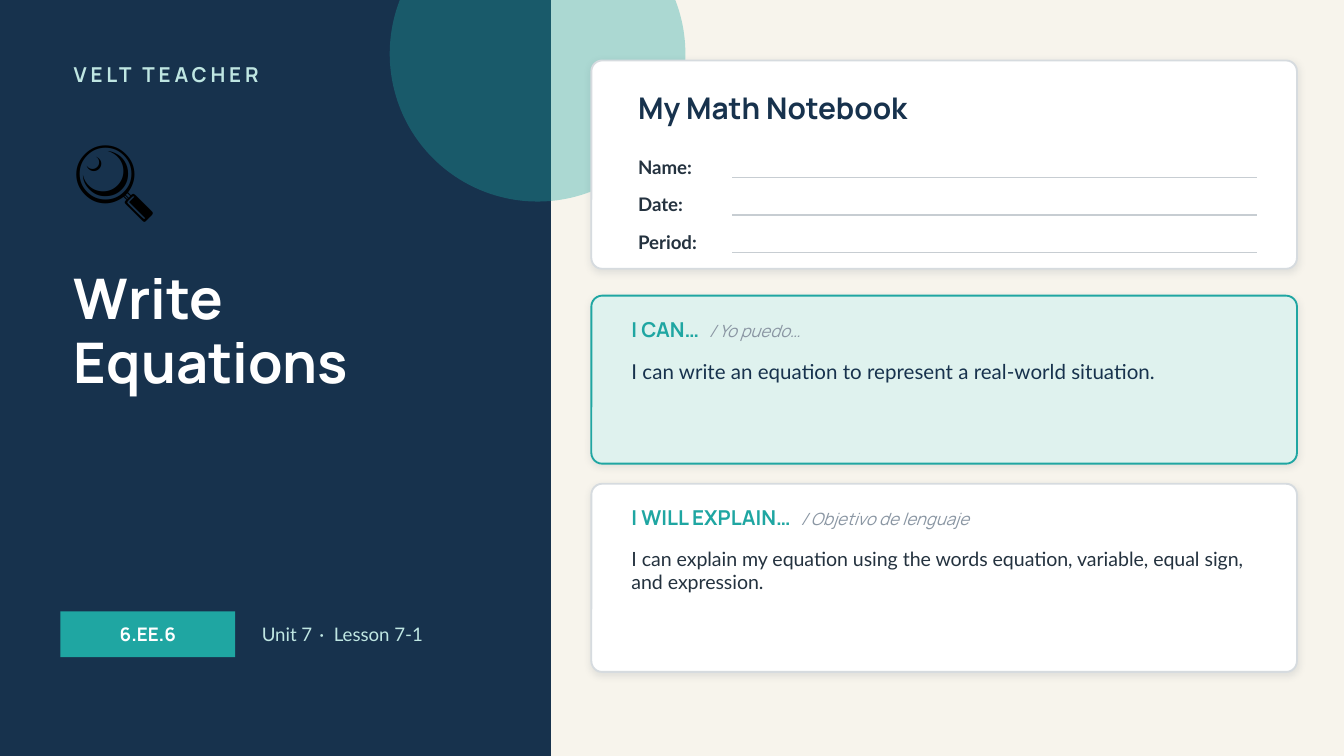
from lxml.etree import SubElement
from pptx import Presentation
from pptx.dml.color import RGBColor
from pptx.enum.shapes import MSO_CONNECTOR, MSO_SHAPE as SHAPE
from pptx.enum.text import MSO_ANCHOR as ANCHOR, MSO_AUTO_SIZE, PP_ALIGN as ALIGN
from pptx.oxml.ns import qn
from pptx.util import Pt

NAVY, TEAL, MINT, INK, WHITE = "17324D", "1FA6A2", "BFE6E2", "24323F", "FFFFFF"
CARD_LEFT, CARD_WIDTH = 316.8, 378
CARD_TEXT_LEFT, CARD_TEXT_WIDTH = 331.2, 349.2
FIELD_LEFT, FIELD_STEP = 334.8, 20.16


def rgb(color):
    return RGBColor.from_string(color)


def add_run(p, text, size, color, font="Lato", bold=False, italic=False, spacing=0):
    r = p.add_run()
    r.text = text
    r.font.size, r.font.name = Pt(size), font
    r.font.bold, r.font.italic = bold, italic
    r.font.color.rgb = rgb(color)
    if spacing:
        r.font._element.set("spc", str(int(spacing * 100)))


def add_text(s, left, top, width, height, anchor=ANCHOR.MIDDLE):
    """Add an empty wrapping text box and return its first paragraph."""
    tf = s.shapes.add_textbox(Pt(left), Pt(top), Pt(width), Pt(height)).text_frame
    tf.word_wrap, tf.vertical_anchor = True, anchor
    return tf.paragraphs[0]


def add_shape(s, kind, left, top, width, height, fill, line=None):
    sp = s.shapes.add_shape(kind, Pt(left), Pt(top), Pt(width), Pt(height))
    sp.shadow.inherit = False
    sp.fill.solid()
    sp.fill.fore_color.rgb = rgb(fill)
    if line:
        sp.line.color.rgb, sp.line.width = rgb(line), Pt(1)
    else:
        sp.line.fill.background()
    return sp


def set_alpha(color_element, percent):
    SubElement(color_element, qn("a:alpha"), val=str(percent * 1000))


def add_card(s, top, height, fill=WHITE, line="D6DBDF"):
    sp = add_shape(s, SHAPE.ROUNDED_RECTANGLE, CARD_LEFT, top, CARD_WIDTH, height, fill, line)
    sp.adjustments[0] = 5.8 / height
    effects = sp.element.spPr.find(qn("a:effectLst"))
    shadow = SubElement(effects, qn("a:outerShdw"), blurRad=str(Pt(4)), dist=str(Pt(1)),
                        dir="5400000", algn="bl", rotWithShape="0")
    set_alpha(SubElement(shadow, qn("a:srgbClr"), val="1C2E42"), 10)


def add_field(s, label, top):
    """Add a bold label with a writing line to its right."""
    add_run(add_text(s, FIELD_LEFT, top, 57.6, 17.28), label, 10, INK, bold=True)
    y = Pt(top + 14.4)
    line = s.shapes.add_connector(MSO_CONNECTOR.STRAIGHT, Pt(392.4), y, Pt(673.2), y)
    line.line.color.rgb, line.line.width = rgb("C7CDD2"), Pt(0.75)
    SubElement(line._element.spPr, qn("a:effectLst"))


def add_goal(s, top, height, heading, translation, text, size, color, **card_colors):
    add_card(s, top, height, **card_colors)
    p = add_text(s, CARD_TEXT_LEFT, top + 7.2, CARD_TEXT_WIDTH, 21.6)
    add_run(p, heading, 11, TEAL, "Manrope", bold=True)
    add_run(p, " ", 11, TEAL, "Manrope", bold=True, spacing=3)
    add_run(p, translation, 9, "8A96A3", "Manrope", italic=True)
    p = add_text(s, CARD_TEXT_LEFT, top + 30.24, CARD_TEXT_WIDTH, height - 34, ANCHOR.TOP)
    add_run(p, text, size, color)


def set_title(s, text):
    sp = s.shapes.title
    sp.left, sp.top, sp.width, sp.height = Pt(32.4), Pt(140.4), Pt(237.6), Pt(122.4)
    sp.element.getparent().append(sp.element)  # bring in front of the panel
    tf = sp.text_frame
    tf.word_wrap, tf.auto_size = True, MSO_AUTO_SIZE.NONE
    tf.vertical_anchor = ANCHOR.TOP
    p = tf.paragraphs[0]
    p.alignment, p.line_spacing = ALIGN.LEFT, 0.95
    add_run(p, text, 30, WHITE, "Manrope", bold=True)


def add_cover_panel(s):
    add_shape(s, SHAPE.RECTANGLE, 0, 0, 295.2, 405, NAVY)
    circle = add_shape(s, SHAPE.OVAL, 208.8, -50.4, 158.4, 158.4, TEAL)
    set_alpha(circle.element.spPr.find(qn("a:solidFill"))[0], 35)

    add_run(add_text(s, 32.4, 28.8, 237.6, 21.6), "VELT TEACHER", 11, MINT, "Manrope",
            bold=True, spacing=2)
    add_run(add_text(s, 32.4, 61.2, 108, 64.8), "🔍", 44, "000000", "Calibri")
    set_title(s, "Write Equations")

    badge = add_shape(s, SHAPE.RECTANGLE, 32.4, 327.6, 93.6, 24.48, TEAL)
    badge.text_frame.vertical_anchor = ANCHOR.MIDDLE
    p = badge.text_frame.paragraphs[0]
    p.alignment = ALIGN.CENTER
    add_run(p, "6.EE.6", 10, WHITE, "Manrope", bold=True)

    p = add_text(s, 133.2, 327.6, 151.2, 24.48)
    for text, spacing in (("Unit 7", 0), (" · ", 1.3), ("Lesson 7-1", 0)):
        add_run(p, text, 10, MINT, spacing=spacing)


def add_notebook_card(s):
    add_card(s, 32.4, 111.6)
    add_run(add_text(s, FIELD_LEFT, 43.2, 345.6, 28.8), "My Math Notebook", 16, NAVY,
            "Manrope", bold=True)
    for i, label in enumerate(("Name:", "Date:", "Period:")):
        add_field(s, label, 80.64 + i * FIELD_STEP)


def main():
    prs = Presentation()
    prs.slide_width, prs.slide_height = Pt(720), Pt(405)
    s = prs.slides.add_slide(prs.slide_layouts.get_by_name("Title Only"))
    s.background.fill.solid()
    s.background.fill.fore_color.rgb = rgb("F7F4EC")

    add_cover_panel(s)
    add_notebook_card(s)
    add_goal(s, 158.4, 90, "I CAN…", "/ Yo puedo…",
             "I can write an equation to represent a real-world situation.",
             11, NAVY, fill="DFF2EE", line=TEAL)
    add_goal(s, 259.2, 100.8, "I WILL EXPLAIN…", "/ Objetivo de lenguaje",
             "I can explain my equation using the words equation, variable, "
             "equal sign, and expression.", 10.5, INK)
    prs.save("out.pptx")


if __name__ == "__main__":
    main()
